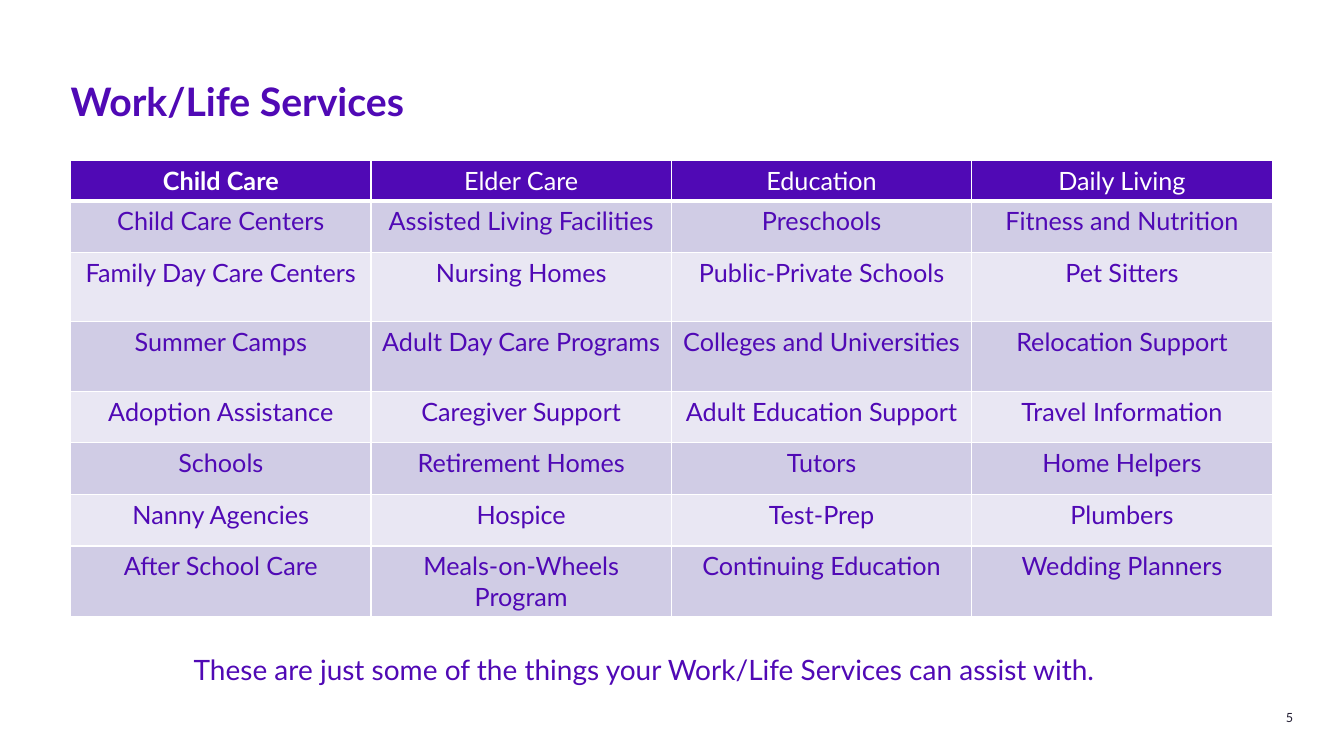
from lxml.etree import SubElement
from pptx import Presentation
from pptx.dml.color import RGBColor
from pptx.enum.text import MSO_ANCHOR, PP_ALIGN
from pptx.oxml.ns import qn
from pptx.util import Cm, Pt

PURPLE = RGBColor(0x50, 0x09, 0xB5)
LILAC = RGBColor(0xD0, 0xCC, 0xE5)
PALE_LILAC = RGBColor(0xE9, 0xE7, 0xF3)
INK = RGBColor(0x23, 0x1E, 0x33)
WHITE = RGBColor(0xFF, 0xFF, 0xFF)

SERVICES = [
    ("Child Care", "Elder Care", "Education", "Daily Living"),
    ("Child Care Centers", "Assisted Living Facilities", "Preschools", "Fitness and Nutrition"),
    ("Family Day Care Centers", "Nursing Homes", "Public-Private Schools", "Pet Sitters"),
    ("Summer Camps", "Adult Day Care Programs", "Colleges and Universities", "Relocation Support"),
    ("Adoption Assistance", "Caregiver Support", "Adult Education Support", "Travel Information"),
    ("Schools", "Retirement Homes", "Tutors", "Home Helpers"),
    ("Nanny Agencies", "Hospice", "Test-Prep", "Plumbers"),
    ("After School Care", "Meals-on-Wheels Program", "Continuing Education", "Wedding Planners"),
]
ROW_HEIGHTS = [0.91, 1.3, 1.75, 1.75, 1.3, 1.3, 1.3, 1.75]
COLUMN_WIDTH = 7.57


class SlideBuilder:
    """Holds the font and the current slide, and adds styled elements to it."""

    def __init__(self, page, font_name="Lato"):
        self.page = page
        self.font_name = font_name

    def style(self, para, size, color, bold=False, align=PP_ALIGN.LEFT):
        para.alignment = align
        for span in para.runs:
            span.font.name = self.font_name
            span.font.size = Pt(size)
            span.font.bold = bold
            span.font.color.rgb = color

    def text(self, words, left, top, width, height, size, color,
             bold=False, align=PP_ALIGN.LEFT, anchor=MSO_ANCHOR.TOP, spacing=1.0):
        box = self.page.shapes.add_textbox(Cm(left), Cm(top), Cm(width), Cm(height))
        frame = box.text_frame
        frame.margin_left = frame.margin_right = frame.margin_top = frame.margin_bottom = 0
        frame.word_wrap = True
        frame.vertical_anchor = anchor
        frame.text = words
        frame.paragraphs[0].line_spacing = spacing
        self.style(frame.paragraphs[0], size, color, bold, align)

    def border(self, cell, bottom_width):
        properties = cell._tc.get_or_add_tcPr()
        for side, width in (("L", 1), ("R", 1), ("T", 1), ("B", bottom_width)):
            line = SubElement(properties, qn(f"a:ln{side}"), w=str(Pt(width)))
            fill = SubElement(line, qn("a:solidFill"))
            SubElement(fill, qn("a:srgbClr"), val=str(WHITE))

    def table(self, rows, heights, column_width, left, top):
        columns = len(rows[0])
        table = self.page.shapes.add_table(
            len(rows), columns, Cm(left), Cm(top),
            Cm(column_width * columns), Cm(sum(heights))).table
        table.horz_banding = False
        for column in table.columns:
            column.width = Cm(column_width)
        for row_index, (labels, height) in enumerate(zip(rows, heights)):
            table.rows[row_index].height = Cm(height)
            header = row_index == 0
            band = PURPLE if header else LILAC if row_index % 2 else PALE_LILAC
            for column_index, label in enumerate(labels):
                cell = table.cell(row_index, column_index)
                cell.text = label
                self.style(cell.text_frame.paragraphs[0], 18, WHITE if header else PURPLE,
                           header and column_index == 0, PP_ALIGN.CENTER)
                self.border(cell, 3 if header else 1)
                cell.fill.solid()
                cell.fill.fore_color.rgb = band


def main():
    deck = Presentation()
    deck.slide_width, deck.slide_height = Cm(33.87), Cm(19.05)
    builder = SlideBuilder(deck.slides.add_slide(deck.slide_layouts[6]))
    builder.text("5", 31.55, 17.88, 1.04, 0.38, 9, INK,
                 align=PP_ALIGN.RIGHT, anchor=MSO_ANCHOR.BOTTOM)
    builder.text("These are just some of the things your Work/Life Services can assist with.",
                 4.88, 16.43, 27.2, 2.08, 20, PURPLE)
    builder.text("Work/Life Services", 1.78, 1.78, 30.3, 1.52, 28, PURPLE,
                 bold=True, spacing=1.14)
    builder.table(SERVICES, ROW_HEIGHTS, COLUMN_WIDTH, 1.78, 4.04)
    deck.save("out.pptx")


if __name__ == "__main__":
    main()
